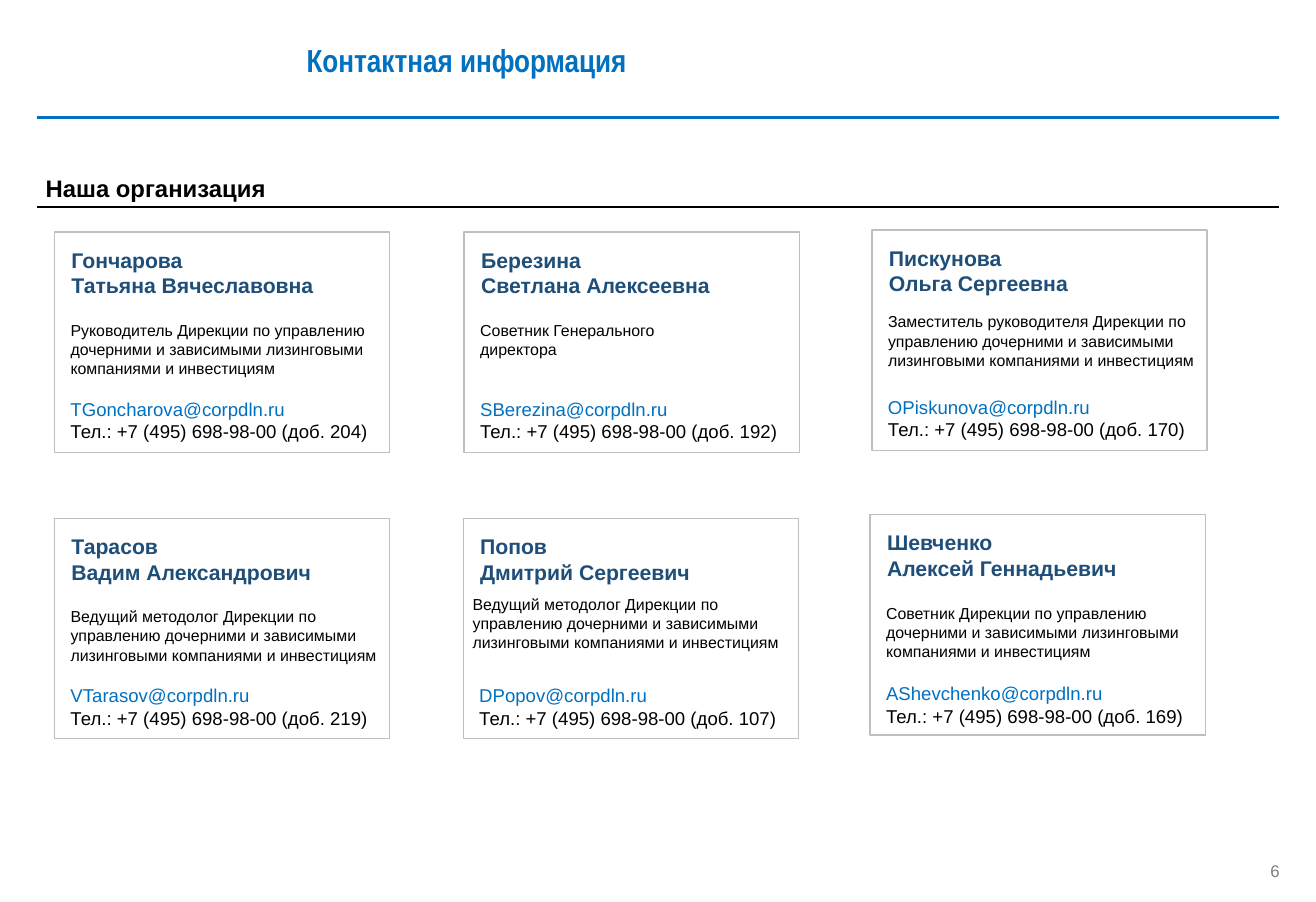
"""Builds a contact slide with six cards in a three by two grid."""
from pptx import Presentation, util as u
from pptx.dml.color import RGBColor
from pptx.enum import text
from pptx.oxml import parse_xml

HUE = {"blue": "0070C0", "navy": "1F4E79", "black": "000000",
       "edge": "BFBFBF", "gray": "808080"}
WIDE, HIGH = 13.78, 9.45
LEFT, TOP = 0.57, 2.43
STEP_X, STEP_Y = 4.28, 3
CARD_W, CARD_H = 3.51, 2.31
COLS = 3
TITLE = "Контактная информация"
FIRM = "Наша организация"
PAGE = "6"
HOST = "@corpdln.ru"
PHONE = "Тел.: +7 (495) 698-98-00 (доб. {})"
UNIT = "Дирекции по управлению дочерними и зависимыми лизинговыми компаниями и инвестициям"
ROLE = {"at": (0.07, 0.88), "wide": 3.45}

CARDS = [
    {"name": ("Гончарова", "Татьяна Вячеславовна"), "role": f"Руководитель {UNIT}",
     "mail": "TGoncharova", "ext": 204},
    {"name": ("Березина", "Светлана Алексеевна"), "role": "Советник Генерального директора",
     "mail": "SBerezina", "ext": 192, "nudge": (0.01, 0), "wide": 2.85},
    {"name": ("Пискунова", "Ольга Сергеевна"), "role": f"Заместитель руководителя {UNIT}",
     "mail": "OPiskunova", "ext": 170, "nudge": (0, -0.02), "at": (0.07, 0.81)},
    {"name": ("Тарасов", "Вадим Александрович"), "role": f"Ведущий методолог {UNIT}",
     "mail": "VTarasov", "ext": 219},
    {"name": ("Попов", "Дмитрий Сергеевич"), "role": f"Ведущий методолог {UNIT}",
     "mail": "DPopov", "ext": 107, "at": (0, 0.75)},
    {"name": ("Шевченко", "Алексей Геннадьевич"), "role": f"Советник {UNIT}",
     "mail": "AShevchenko", "ext": 169, "nudge": (-0.02, -0.04), "space": 1.06},
]


def rgb(key):
    return RGBColor.from_string(HUE[key])


def inch(*nums):
    return [u.Inches(n) for n in nums]


def write(frame, lines, size, bold=False, font="Arial", space=None):
    frame.word_wrap = True
    for i, (words, hue) in enumerate(lines):
        para = frame.paragraphs[0] if i == 0 else frame.add_paragraph()
        para.line_spacing = space
        run = para.add_run()
        run.text = words
        run.font.name, run.font.size, run.font.bold = font, u.Pt(size), bold
        run.font.color.rgb = rgb(hue)


def label(home, area, lines, size, **style):
    frame = home.add_textbox(*inch(*area)).text_frame
    write(frame, lines, size, **style)
    frame.auto_size = text.MSO_AUTO_SIZE.SHAPE_TO_FIT_TEXT
    return frame


def rule(home, y, hue, width):
    line = home.add_connector(1, *inch(0.39, y, 13.39, y))
    line.line.color.rgb, line.line.width = rgb(hue), u.Pt(width)
    line._element.spPr.append(parse_xml(
        '<a:effectLst xmlns:a="http://schemas.openxmlformats.org/drawingml/2006/main"/>'))


def card(slide, i, who):
    who = {"nudge": (0, 0), "space": None, **ROLE, **who}
    row, col = divmod(i, COLS)
    x = LEFT + col * STEP_X + who["nudge"][0]
    y = TOP + row * STEP_Y + who["nudge"][1]
    home = slide.shapes.add_group_shape().shapes
    box = home.add_shape(1, *inch(x, y, CARD_W, CARD_H))
    box.shadow.inherit = False
    box.fill.background()
    box.line.color.rgb, box.line.width = rgb("edge"), u.Pt(1)
    label(home, (x + 0.08, y + 0.11, 3.43, 0.64),
          [(part, "navy") for part in who["name"]], 16, bold=True)
    label(home, (x + 0.07, y + 1.69, 3.43, 0.57),
          [(who["mail"] + HOST, "blue"), (PHONE.format(who["ext"]), "black")],
          14, space=who["space"])
    dx, dy = who["at"]
    label(home, (x + dx, y + dy, who["wide"], 0.71), [(who["role"], "black")], 12)


def main():
    deck = Presentation()
    deck.slide_width, deck.slide_height = inch(WIDE, HIGH)
    slide = deck.slides.add_slide(deck.slide_layouts[5])
    home = slide.shapes

    head = home.title
    head.left, head.top, head.width, head.height = inch(3.11, 0.25, 10.29, 0.76)
    write(head.text_frame, [(TITLE, "blue")], 24, bold=True, font="Arial Narrow")
    head.text_frame.auto_size = text.MSO_AUTO_SIZE.NONE
    head.text_frame.vertical_anchor = text.MSO_ANCHOR.MIDDLE
    head.text_frame.paragraphs[0].alignment = text.PP_ALIGN.LEFT

    rule(home, 1.23, "blue", 2.25)
    label(home, (0.38, 1.77, 8.34, 0.4), [(FIRM, "black")], 18, bold=True)
    rule(home, 2.17, "black", 1.5)
    for i, who in enumerate(CARDS):
        card(slide, i, who)

    foot = label(home, (12.98, 9.03, 0.42, 0.2), [(PAGE, "gray")], 12.7, space=u.Pt(14.3))
    foot.margin_left = foot.margin_right = foot.margin_top = foot.margin_bottom = 0
    foot.paragraphs[0].alignment = text.PP_ALIGN.RIGHT
    deck.save("out.pptx")


if __name__ == "__main__":
    main()
